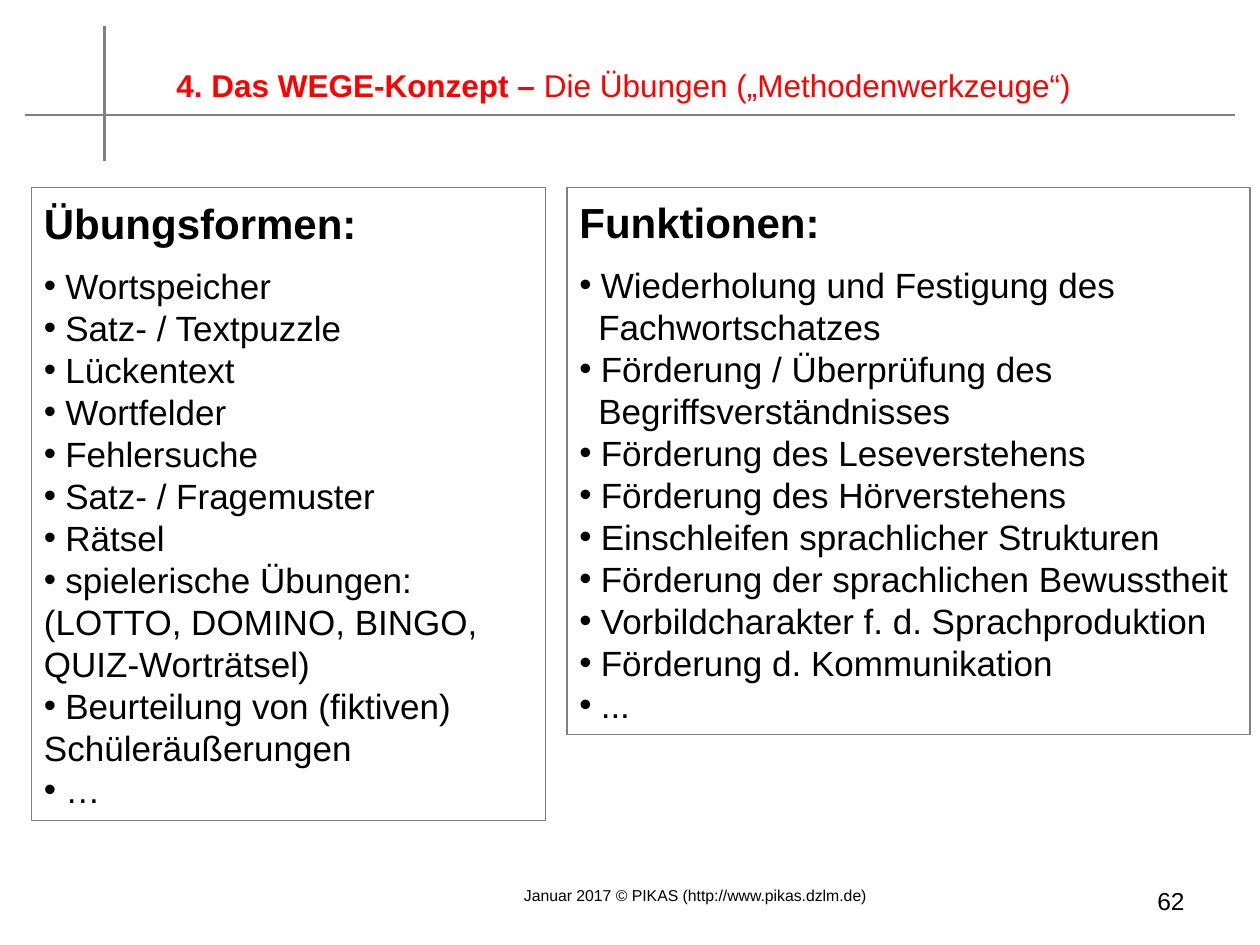
from pptx import Presentation
from pptx.dml.color import RGBColor
from pptx.enum.shapes import MSO_CONNECTOR, MSO_SHAPE
from pptx.enum.text import MSO_ANCHOR, MSO_AUTO_SIZE, PP_ALIGN
from pptx.oxml.ns import qn
from pptx.util import Inches, Pt
from lxml import etree

BLACK = RGBColor(0, 0, 0)
RED = RGBColor(0xFF, 0, 0)
GRAY = RGBColor(0x80, 0x80, 0x80)
STRAIGHT = MSO_CONNECTOR.STRAIGHT
RECTANGLE = MSO_SHAPE.RECTANGLE
TOP, MIDDLE = MSO_ANCHOR.TOP, MSO_ANCHOR.MIDDLE
NO_AUTOFIT = MSO_AUTO_SIZE.NONE
LEFT, CENTER, RIGHT = PP_ALIGN.LEFT, PP_ALIGN.CENTER, PP_ALIGN.RIGHT
FONT = "Arial"
BULLET_INDENT = 0.17

EXERCISES = [
    ("Wortspeicher", True),
    ("Satz- / Textpuzzle", True),
    ("Lückentext", True),
    ("Wortfelder", True),
    ("Fehlersuche", True),
    ("Satz- / Fragemuster", True),
    ("Rätsel", True),
    ("spielerische Übungen:", True),
    ("(LOTTO, DOMINO, BINGO, QUIZ-Worträtsel)", False),
    ("Beurteilung von (fiktiven)", True),
    ("Schüleräußerungen", False),
    ("…", True),
]
FUNCTIONS = [
    ("Wiederholung und Festigung des", True),
    ("Fachwortschatzes", False),
    ("Förderung / Überprüfung des", True),
    ("Begriffsverständnisses", False),
    ("Förderung des Leseverstehens", True),
    ("Förderung des Hörverstehens", True),
    ("Einschleifen sprachlicher Strukturen", True),
    ("Förderung der sprachlichen Bewusstheit", True),
    ("Vorbildcharakter f. d. Sprachproduktion", True),
    ("Förderung d. Kommunikation", True),
    ("...", True),
]


def add_span(para, text, size, color=BLACK, bold=False):
    span = para.add_run()
    span.text = text
    span.font.name = FONT
    span.font.size = Pt(size)
    span.font.bold = bold
    span.font.color.rgb = color


def set_indent(para, bullet, plain_indent):
    properties = para._p.get_or_add_pPr()
    margin = BULLET_INDENT if bullet else plain_indent
    properties.set("marL", str(Inches(margin)))
    properties.set("indent", str(-Inches(margin) if bullet else 0))
    if bullet:
        etree.SubElement(properties, qn("a:buFont")).set("typeface", FONT)
        etree.SubElement(properties, qn("a:buChar")).set("char", "•")


def add_line(slide, x1, y1, x2, y2):
    line = slide.shapes.add_connector(
        STRAIGHT, Inches(x1), Inches(y1), Inches(x2), Inches(y2))
    line.line.color.rgb = GRAY
    line.line.width = Pt(1.25)
    etree.SubElement(line._element.spPr, qn("a:effectLst"))


def add_title(slide):
    title = slide.shapes.title
    title.left, title.top = Inches(0), Inches(0.52)
    title.width, title.height = Inches(10), Inches(0.71)
    frame = title.text_frame
    frame.auto_size = NO_AUTOFIT
    frame.vertical_anchor = TOP
    frame.margin_left = frame.margin_top = frame.margin_bottom = 0
    frame.margin_right = Inches(0.1)
    para = frame.paragraphs[0]
    para.alignment = CENTER
    para.line_spacing = 1.0
    add_span(para, "4. Das WEGE-Konzept – ", 18, color=RED, bold=True)
    add_span(para, "Die Übungen („Methodenwerkzeuge“)", 18, color=RED)


def add_label(slide, text, left, width, height, size, alignment=LEFT, wrap=True):
    box = slide.shapes.add_textbox(
        Inches(left), Inches(6.98), Inches(width), Inches(height))
    box.text_frame.word_wrap = wrap
    para = box.text_frame.paragraphs[0]
    para.alignment = alignment
    add_span(para, text, size)


def add_list_box(slide, heading, items, left, width, height, plain_indent=0):
    box = slide.shapes.add_shape(
        RECTANGLE, Inches(left), Inches(1.49), Inches(width), Inches(height))
    box.shadow.inherit = False
    box.fill.background()
    box.line.color.rgb = GRAY
    box.line.width = Pt(0.75)
    frame = box.text_frame
    frame.word_wrap = True
    frame.vertical_anchor = MIDDLE
    para = frame.paragraphs[0]
    para.alignment = LEFT
    para.space_after = Pt(9.4)
    add_span(para, heading, 24, bold=True)
    for text, bullet in items:
        para = frame.add_paragraph()
        para.alignment = LEFT
        para.line_spacing = Pt(24)
        set_indent(para, bullet, plain_indent)
        add_span(para, text, 20)


def main():
    deck = Presentation()
    deck.slide_width, deck.slide_height = Inches(10), Inches(7.5)
    page = deck.slides.add_slide(deck.slide_layouts[5])
    add_line(page, 0.2, 0.91, 9.8, 0.91)
    add_line(page, 0.83, 0.21, 0.83, 1.28)
    add_title(page)
    add_list_box(page, "Übungsformen:", EXERCISES, 0.25, 4.08, 5.02)
    add_list_box(page, "Funktionen:", FUNCTIONS, 4.5, 5.42, 4.34, plain_indent=0.15)
    add_label(page, "Januar 2017 © PIKAS (http://www.pikas.dzlm.de)",
              4.06, 2.95, 0.25, 9, wrap=False)
    add_label(page, "62", 7.2, 2.3, 0.52, 14, alignment=RIGHT)
    deck.save("out.pptx")


if __name__ == "__main__":
    main()
